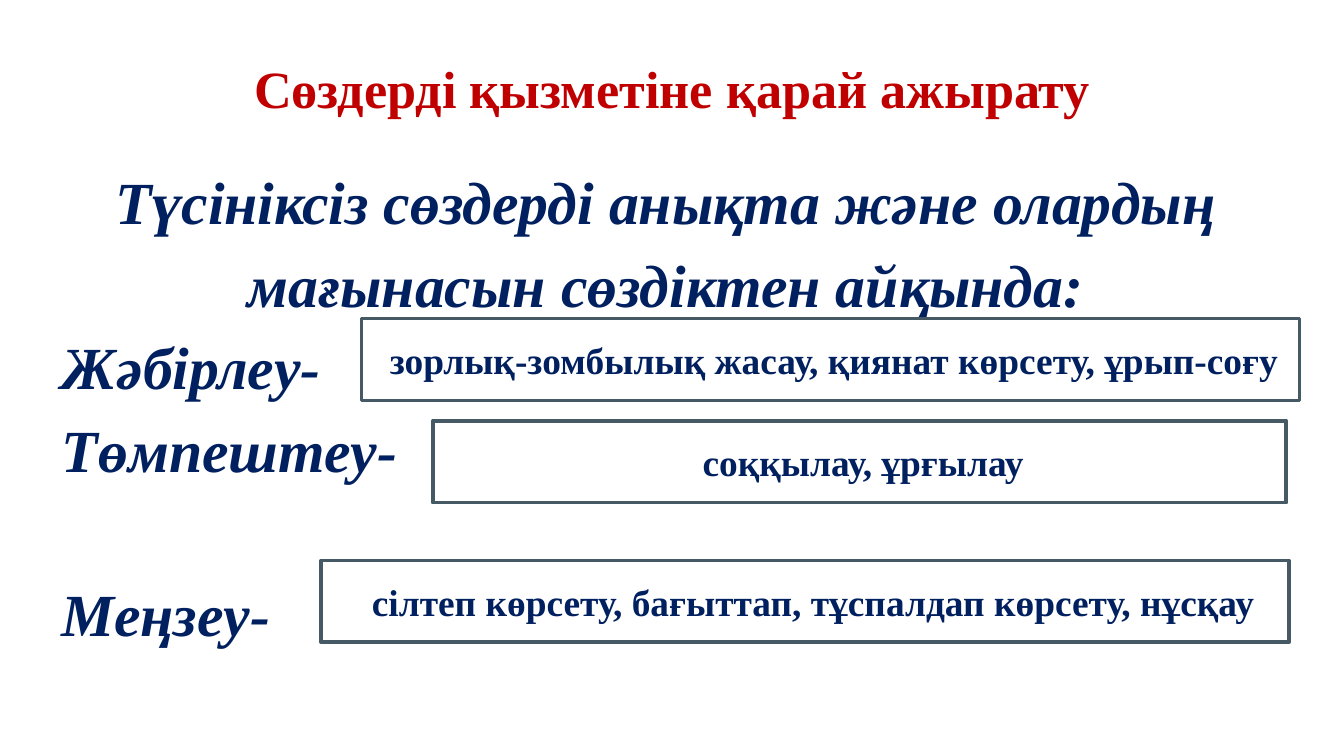
from pptx import Presentation
from pptx.dml.color import RGBColor
from pptx.enum.shapes import MSO_SHAPE
from pptx.enum.text import MSO_ANCHOR, PP_ALIGN
from pptx.util import Inches, Pt

RECT = MSO_SHAPE.RECTANGLE
MIDDLE = MSO_ANCHOR.MIDDLE
CENTER, LEFT = PP_ALIGN.CENTER, PP_ALIGN.LEFT
SERIF = "Times New Roman"
RED, NAVY, SLATE, WHITE, MINT = "C00000", "002060", "455A64", "FFFFFF", "00FDC8"

TITLE = "Cөздерді қызметіне қарай ажырату"
BODY = [
    ("Түсініксіз сөздерді анықта және олардың мағынасын сөздіктен айқында:", CENTER, 0),
    ("Жәбірлеу-", LEFT, 0),
    ("Төмпештеу-", LEFT, 0),
    ("Меңзеу-", LEFT, 44),
]
MEANINGS = [
    (2.69, 2.37, 6.98, "зорлық-зомбылық жасау, қиянат көрсету, ұрып-соғу"),
    (3.22, 3.13, 6.35, "соққылау, ұрғылау"),
    (2.39, 4.17, 7.2, " сілтеп көрсету, бағыттап, тұспалдап көрсету, нұсқау"),
]
BOX_H = 0.61


def rgb(value):
    return RGBColor.from_string(value)


def add_run(p, text, size, color, font=SERIF, bold=True, italic=False):
    r = p.add_run()
    r.text = text
    r.font.size = Pt(size)
    r.font.name = font
    r.font.bold = bold
    r.font.italic = italic
    r.font.color.rgb = rgb(color)


def add_text_frame(s, x, y, w, h, left_inset=0.1):
    tf = s.shapes.add_textbox(Inches(x), Inches(y), Inches(w), Inches(h)).text_frame
    tf.word_wrap = True
    tf.margin_left = Inches(left_inset)
    tf.margin_right = tf.margin_top = tf.margin_bottom = Inches(0.1)
    return tf


prs = Presentation()
prs.slide_width = Inches(10)
prs.slide_height = prs.slide_width * 9 // 16
s = prs.slides.add_slide(prs.slide_layouts[6])

p = add_text_frame(s, 0.34, 0.32, 9.32, 0.88).paragraphs[0]
p.alignment = CENTER
add_run(p, TITLE, 28, RED)

tf = add_text_frame(s, 0.23, 1.05, 9.32, 3.94, left_inset=0.23)
for i, (text, align, before) in enumerate(BODY):
    p = tf.add_paragraph() if i else tf.paragraphs[0]
    p.alignment = align
    p.line_spacing = 1.15
    p.space_before = Pt(before)
    add_run(p, text, 32, NAVY, italic=True)

for x, y, w, meaning in MEANINGS:
    sp = s.shapes.add_shape(RECT, Inches(x), Inches(y), Inches(w), Inches(BOX_H))
    sp.shadow.inherit = False
    sp.fill.solid()
    sp.fill.fore_color.rgb = rgb(WHITE)
    sp.line.color.rgb = rgb(SLATE)
    sp.line.width = Pt(2)
    tf = sp.text_frame
    tf.word_wrap = True
    tf.vertical_anchor = MIDDLE
    p = tf.paragraphs[0]
    p.alignment = CENTER
    add_run(p, " ", 14, MINT, font="Arial", bold=False)
    add_run(p, meaning, 20, NAVY)

prs.save("out.pptx")
